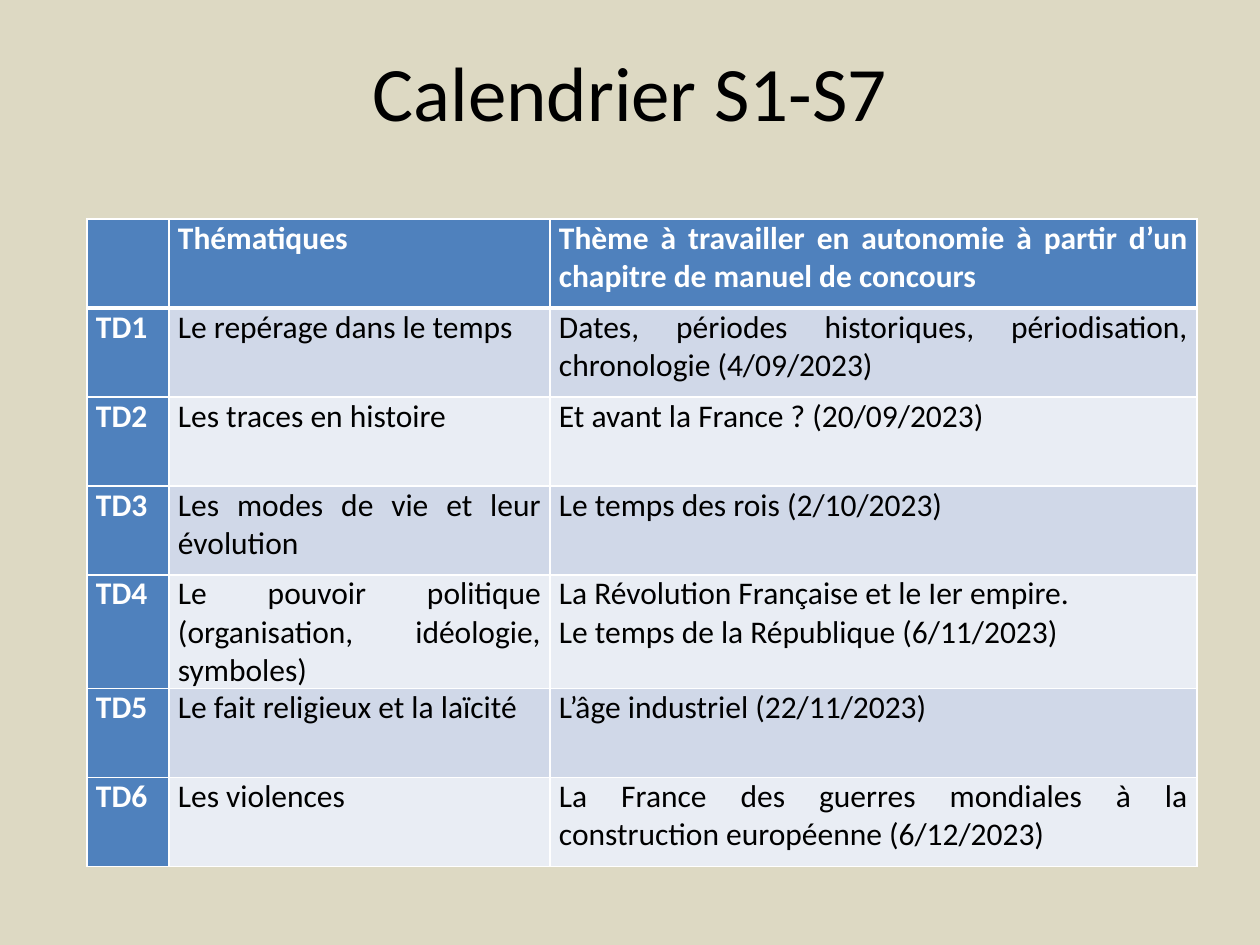
import pptx
import pptx.dml.color
import pptx.enum.text
import pptx.oxml
import pptx.oxml.ns
import pptx.util
from dataclasses import dataclass

PX = pptx.util.Inches(1) / 126
ALIGN = pptx.enum.text.PP_ALIGN


@dataclass(frozen=True)
class Theme:
    font: str = "Calibri"
    background: str = "DDD9C3"
    ink: str = "000000"
    white: str = "FFFFFF"
    header: str = "4F81BD"
    bands: tuple = ("D0D8E8", "E9EDF4")
    title_size: int = 44
    cell_size: int = 18
    border: int = 1
    header_border: int = 3


THEME = Theme()

HEADINGS = ("", "Thématiques",
            "Thème à travailler en autonomie à partir d’un chapitre de manuel de concours")
SESSIONS = [
    ("Le repérage dans le temps",
     "Dates, périodes historiques, périodisation, chronologie (4/09/2023)"),
    ("Les traces en histoire", "Et avant la France ? (20/09/2023)"),
    ("Les modes de vie et leur évolution", "Le temps des rois (2/10/2023)"),
    ("Le pouvoir politique (organisation, idéologie, symboles)",
     "La Révolution Française et le Ier empire.\nLe temps de la République (6/11/2023)"),
    ("Le fait religieux et la laïcité", "L’âge industriel (22/11/2023)"),
    ("Les violences",
     "La France des guerres mondiales à la construction européenne (6/12/2023)"),
]


def px(length):
    return pptx.util.Emu(round(length * PX))


def rgb(value):
    return pptx.dml.color.RGBColor.from_string(value)


def write(frame, text, *, size, color=THEME.ink, bold=False, align=ALIGN.JUSTIFY):
    """Fill a text frame, one paragraph for each line of text."""
    frame.word_wrap = True
    frame.text = text
    for paragraph in frame.paragraphs:
        paragraph.alignment = align
        font = paragraph.font
        for target in [font] + [run.font for run in paragraph.runs]:
            target.name = THEME.font
            target.size = pptx.util.Pt(size)
            target.bold = bold
            target.color.rgb = rgb(color)


def set_borders(cell, **widths):
    """Draw the four cell borders; a width in points may be given per side."""
    properties = cell._tc.get_or_add_tcPr()
    for position, side in enumerate("LRTB"):
        width = pptx.util.Pt(widths.get(side, THEME.border))
        line = pptx.oxml.parse_xml(
            f'<a:ln{side} {pptx.oxml.ns.nsdecls("a")} w="{width}">'
            f'<a:solidFill><a:srgbClr val="{THEME.white}"/></a:solidFill>'
            f'</a:ln{side}>')
        properties.insert(position, line)


def add_title(slide, left, top, width, height):
    title = slide.shapes.add_textbox(px(left), px(top), px(width), px(height))
    title.text_frame.vertical_anchor = pptx.enum.text.MSO_ANCHOR.MIDDLE
    write(title.text_frame, "Calendrier S1-S7", size=THEME.title_size, align=ALIGN.CENTER)


def add_calendar(slide, left, top, column_widths, row_height):
    rows = [HEADINGS] + [(f"TD{number}", *session)
                         for number, session in enumerate(SESSIONS, 1)]
    calendar = slide.shapes.add_table(
        len(rows), len(column_widths), px(left), px(top),
        px(sum(column_widths)), px(row_height * len(rows))).table
    for column, width in zip(calendar.columns, column_widths):
        column.width = px(width)

    for row_index, texts in enumerate(rows):
        calendar.rows[row_index].height = px(row_height)
        for column_index, text in enumerate(texts):
            cell = calendar.cell(row_index, column_index)
            cell.margin_left = cell.margin_right = px(9)
            cell.margin_top = cell.margin_bottom = 0

            # The first row and column are headers, the rest is banded
            is_header = row_index == 0 or column_index == 0
            cell.fill.solid()
            cell.fill.fore_color.rgb = rgb(
                THEME.header if is_header else THEME.bands[(row_index - 1) % 2])
            write(cell.text_frame, text, size=THEME.cell_size, bold=is_header,
                  color=THEME.white if is_header else THEME.ink)

            # A thick rule separates the headings from the sessions
            heading_rule = {0: "B", 1: "T"}.get(row_index)
            set_borders(cell, **({heading_rule: THEME.header_border} if heading_rule else {}))


def main():
    deck = pptx.Presentation()
    deck.slide_width, deck.slide_height = px(1260), px(945)
    slide = deck.slides.add_slide(deck.slide_layouts[6])
    slide.background.fill.solid()
    slide.background.fill.fore_color.rgb = rgb(THEME.background)

    add_title(slide, 63, 20, 1134, 141)
    add_calendar(slide, 87, 219, (82, 381, 647), 89)
    deck.save("out.pptx")


if __name__ == "__main__":
    main()
